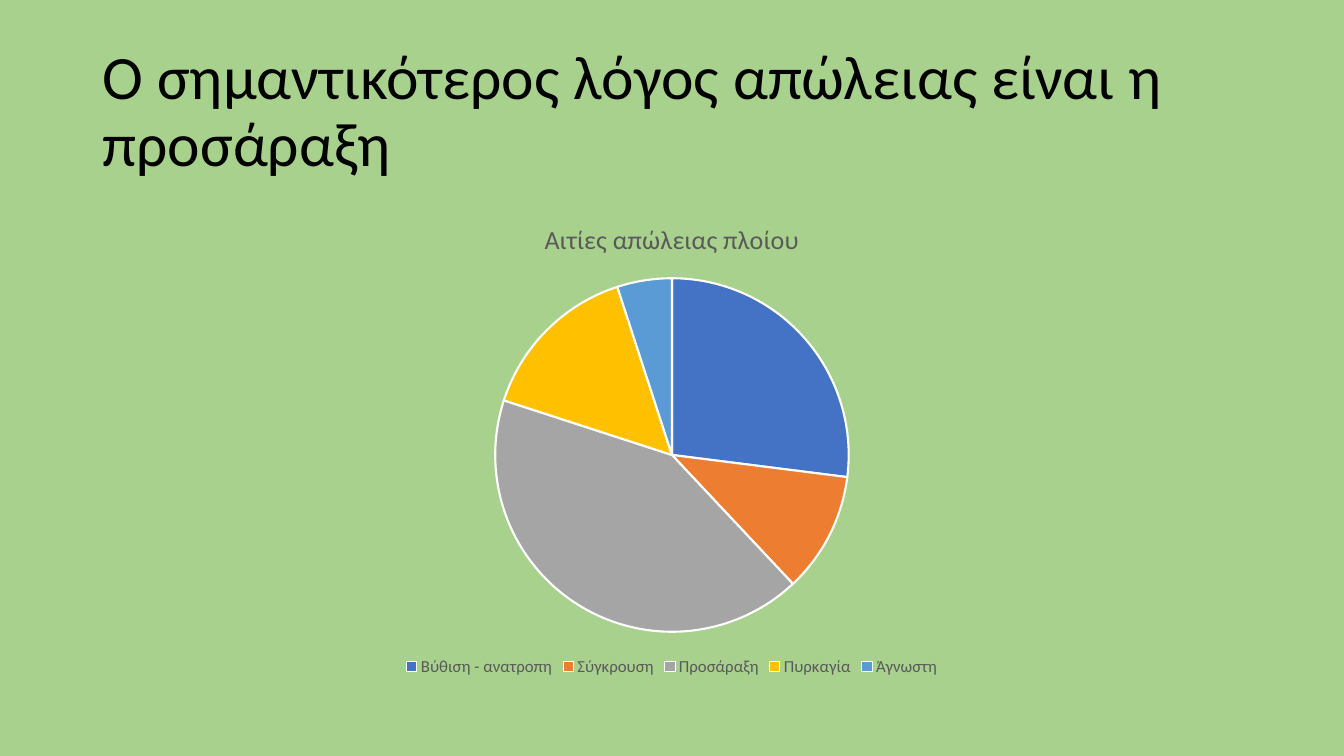
import pptx
import pptx.chart.data
import pptx.dml.color
import pptx.enum.chart
import pptx.enum.text
import pptx.util
from pptx.util import Cm

TITLE = "Ο σημαντικότερος λόγος απώλειας είναι η προσάραξη"
CHART_TITLE = "Αιτίες απώλειας πλοίου"
CAUSES = [
    ("Βύθιση - ανατροπη", 27, "blue"),
    ("Σύγκρουση", 11, "orange"),
    ("Προσάραξη", 42, "gray"),
    ("Πυρκαγία", 15, "gold"),
    ("Άγνωστη", 5, "sky"),
]
COLORS = {
    "background": "A9D18E",
    "title": "000000",
    "label": "595959",
    "edge": "FFFFFF",
    "blue": "4472C4",
    "orange": "ED7D31",
    "gray": "A5A5A5",
    "gold": "FFC000",
    "sky": "5B9BD5",
}
FONT = "Calibri"
LEFT, WIDTH = Cm(2.33), Cm(29.21)


def rgb(name):
    return pptx.dml.color.RGBColor.from_string(COLORS[name])


def style_font(font, size, color):
    font.name = FONT
    font.size = pptx.util.Pt(size)
    font.bold = False
    font.color.rgb = rgb(color)


def add_title(s):
    sp = s.shapes.title
    sp.left, sp.top, sp.width, sp.height = LEFT, Cm(1.01), WIDTH, Cm(3.68)
    tf = sp.text_frame
    tf.text = TITLE
    tf.word_wrap = True
    tf.auto_size = pptx.enum.text.MSO_AUTO_SIZE.NONE
    tf.vertical_anchor = pptx.enum.text.MSO_ANCHOR.MIDDLE
    p = tf.paragraphs[0]
    p.alignment = pptx.enum.text.PP_ALIGN.LEFT
    p.line_spacing = 0.9
    style_font(p.runs[0].font, 44, "title")


def add_causes_chart(s):
    data = pptx.chart.data.CategoryChartData()
    data.categories = [cause for cause, share, color in CAUSES]
    data.add_series(CHART_TITLE, [share for cause, share, color in CAUSES])
    chart = s.shapes.add_chart(
        pptx.enum.chart.XL_CHART_TYPE.PIE, LEFT, Cm(5.07), WIDTH, Cm(12.09), data
    ).chart
    style_font(chart.font, 10, "title")

    chart.has_title = True
    tf = chart.chart_title.text_frame
    tf.text = CHART_TITLE
    style_font(tf.paragraphs[0].runs[0].font, 18.6, "label")
    chart.chart_title.include_in_layout = False

    chart.has_legend = True
    chart.legend.position = pptx.enum.chart.XL_LEGEND_POSITION.BOTTOM
    chart.legend.include_in_layout = False
    style_font(chart.legend.font, 12, "label")

    plot = chart.plots[0]
    plot.vary_by_categories = True
    for i, (cause, share, color) in enumerate(CAUSES):
        fmt = plot.series[0].points[i].format
        fmt.fill.solid()
        fmt.fill.fore_color.rgb = rgb(color)
        fmt.line.color.rgb = rgb("edge")
        fmt.line.width = pptx.util.Pt(1.5)


def main():
    prs = pptx.Presentation()
    prs.slide_width, prs.slide_height = Cm(33.87), Cm(19.05)
    s = prs.slides.add_slide(prs.slide_layouts[5])
    s.background.fill.solid()
    s.background.fill.fore_color.rgb = rgb("background")
    add_title(s)
    add_causes_chart(s)
    prs.save("out.pptx")


if __name__ == "__main__":
    main()
